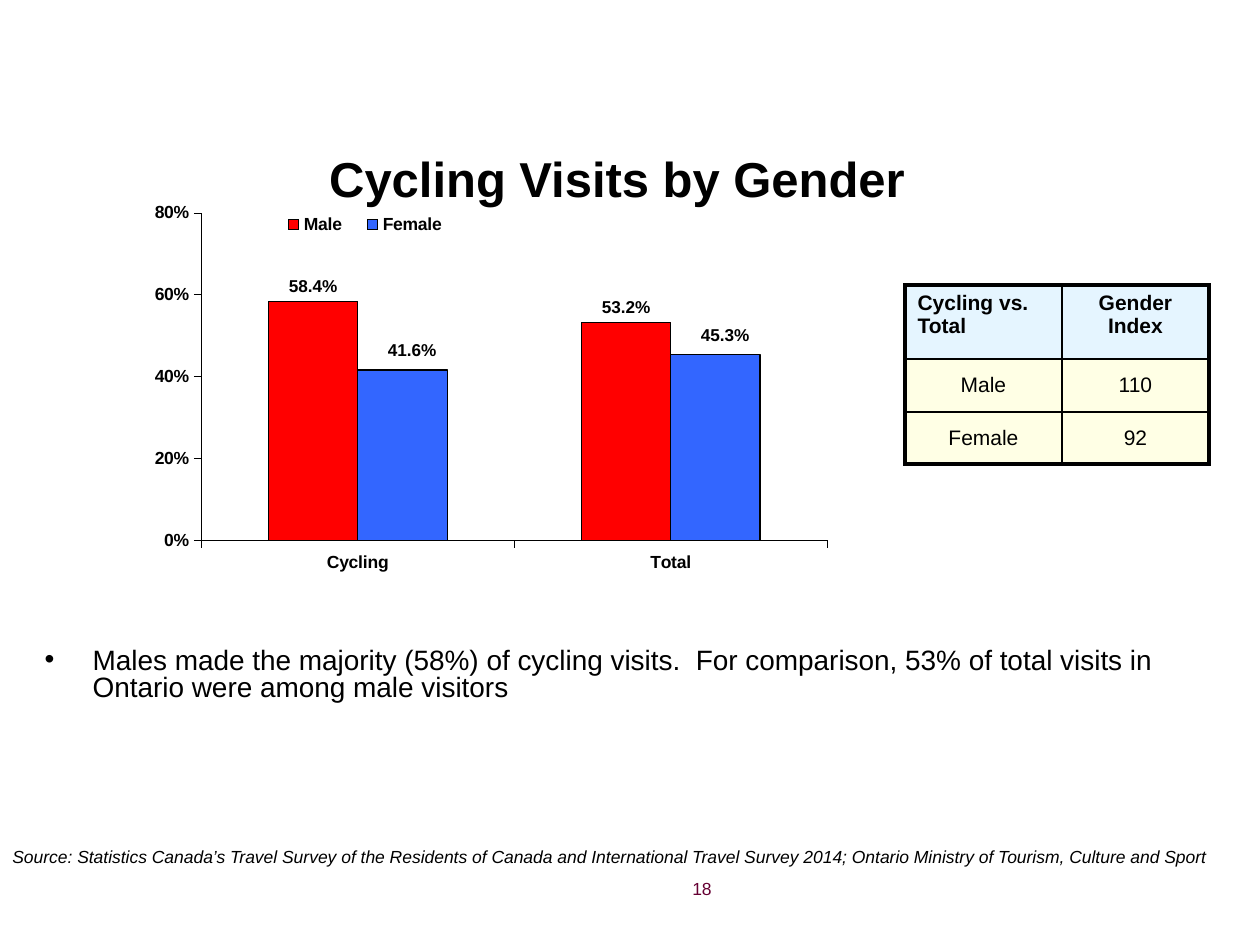
from pptx import Presentation
from pptx.chart.data import CategoryChartData
from pptx.dml.color import RGBColor
from pptx.enum.chart import XL_CHART_TYPE, XL_LABEL_POSITION, XL_LEGEND_POSITION, XL_TICK_MARK
from pptx.enum.text import MSO_ANCHOR, PP_ALIGN
from pptx.oxml import parse_xml
from pptx.oxml.ns import nsdecls
from pptx.util import Emu, Pt

COLUMNS = XL_CHART_TYPE.COLUMN_CLUSTERED
OUTSIDE_END = XL_LABEL_POSITION.OUTSIDE_END
LEGEND_RIGHT = XL_LEGEND_POSITION.RIGHT
TICK_OUT, TICK_NONE = XL_TICK_MARK.OUTSIDE, XL_TICK_MARK.NONE
TOP, MIDDLE = MSO_ANCHOR.TOP, MSO_ANCHOR.MIDDLE
LEFT, CENTER, RIGHT = PP_ALIGN.LEFT, PP_ALIGN.CENTER, PP_ALIGN.RIGHT

FONT = "Arial"
BLACK = "000000"


def px(length):
    return Emu(round(length * 914400 / 126))


def color(hex_code):
    return RGBColor.from_string(hex_code)


def style_font(font, size, ink=BLACK, bold=False, italic=False):
    font.name, font.size, font.bold, font.italic = FONT, Pt(size), bold, italic
    font.color.rgb = color(ink)


def write(frame, text, align=LEFT, spacing=None, **style):
    """Put one formatted paragraph into a text frame."""
    para = frame.paragraphs[0]
    para.alignment = align
    para.space_before = Pt(0)
    if spacing:
        para.line_spacing = spacing
    span = para.add_run()
    span.text = text
    style_font(span.font, **style)
    return para


def manual_layout(x, y, width=None, height=None, mode="edge", target=None):
    """Chart layout as fractions of the chart area."""
    parts = f'<c:layoutTarget val="{target}"/>' if target else ""
    if mode == "edge":
        parts += '<c:xMode val="edge"/><c:yMode val="edge"/>'
    parts += f'<c:x val="{x}"/><c:y val="{y}"/>'
    if width:
        parts += f'<c:w val="{width}"/><c:h val="{height}"/>'
    return parse_xml(f'<c:layout {nsdecls("c")}><c:manualLayout>{parts}'
                     '</c:manualLayout></c:layout>')


def place_layout(element, layout, after=None):
    """Set an element's layout, first or just after a named child."""
    for old in element.xpath("c:layout"):
        element.remove(old)
    if after:
        element.xpath(after)[0].addnext(layout)
    else:
        element.insert(0, layout)


class SlideBuilder:
    def __init__(self, deck):
        self.page = deck.slides.add_slide(deck.slide_layouts[1])

    def place(self, box, left, top, width, height):
        box.left, box.top = px(left), px(top)
        box.width, box.height = px(width), px(height)
        box.text_frame.word_wrap = True
        box.text_frame.vertical_anchor = TOP
        return box.text_frame

    def title(self, text, *area):
        frame = self.place(self.page.shapes.title, *area)
        frame.margin_top = px(12)
        write(frame, text, CENTER, size=28, bold=True)

    def bullet(self, text, *area):
        frame = self.place(self.page.placeholders[1], *area)
        para = write(frame, text, spacing=0.8, size=16)
        properties = para._p.get_or_add_pPr()
        properties.set("marL", str(px(48)))
        properties.set("indent", str(px(-48)))
        properties.append(parse_xml(f'<a:buChar {nsdecls("a")} char="•"/>'))

    def text(self, text, *area, **style):
        box = self.page.shapes.add_textbox(*map(px, area))
        write(self.place(box, *area), text, **style)

    def table(self, left, top, widths, heights, rows):
        table = self.page.shapes.add_table(
            len(heights), len(widths), px(left), px(top),
            px(sum(widths)), px(sum(heights))).table
        table.first_row = table.horz_banding = False
        for column, width in zip(table.columns, widths):
            column.width = px(width)
        for row, height in zip(table.rows, heights):
            row.height = px(height)
        for r, values in enumerate(rows):
            for c, value in enumerate(values):
                outer = {"L": c == 0, "R": c == len(widths) - 1,
                         "T": r == 0, "B": r == len(heights) - 1}
                self.cell(table.cell(r, c), value, r == 0, c == 0, outer)

    def cell(self, cell, value, header, first, outer):
        if not header:
            cell.margin_left = cell.margin_right = 0
            cell.margin_top = cell.margin_bottom = 0
        cell.vertical_anchor = TOP if header else MIDDLE
        write(cell.text_frame, value, LEFT if header and first else CENTER,
              size=12, bold=header)
        cell.fill.solid()
        cell.fill.fore_color.rgb = color("CCECFF" if header else "FFFFCC")
        properties = cell._tc.get_or_add_tcPr()
        properties.xpath("a:solidFill/a:srgbClr")[0].append(
            parse_xml(f'<a:alpha {nsdecls("a")} val="50000"/>'))
        for index, side in enumerate("LRTB"):
            width = Pt(2.25 if outer[side] else 1)
            properties.insert(index, parse_xml(
                f'<a:ln{side} {nsdecls("a")} w="{width}"><a:solidFill>'
                f'<a:srgbClr val="{BLACK}"/></a:solidFill></a:ln{side}>'))

    def chart(self, categories, series, fills, nudges, *area):
        data = CategoryChartData(number_format="0.0%")
        data.categories = categories
        for name, values in series.items():
            data.add_series(name, values)
        chart = self.page.shapes.add_chart(COLUMNS, *map(px, area), data).chart
        style_font(chart.font, 10, bold=True)
        chart.has_title = False
        plot = chart.plots[0]
        plot.gap_width, plot.overlap, plot.vary_by_categories = 150, 0, False

        # Axes
        for axis in (chart.category_axis, chart.value_axis):
            axis.has_major_gridlines = False
            axis.major_tick_mark, axis.minor_tick_mark = TICK_OUT, TICK_NONE
            axis.format.line.color.rgb = color(BLACK)
            axis.format.line.width = Pt(0.19)
            style_font(axis.tick_labels.font, 10, bold=True)
        scale = chart.value_axis
        scale.minimum_scale, scale.maximum_scale, scale.major_unit = 0, 0.8, 0.2
        scale.tick_labels.number_format = "0%"
        scale.tick_labels.number_format_is_linked = False

        # Bars and their labels
        for bars, fill in zip(plot.series, fills):
            bars.format.fill.solid()
            bars.format.fill.fore_color.rgb = color(fill)
            bars.format.line.color.rgb = color(BLACK)
            bars.format.line.width = Pt(0.75)
            labels = bars.data_labels
            labels.show_value, labels.position = True, OUTSIDE_END
            labels.number_format, labels.number_format_is_linked = "0.0%", False
            style_font(labels.font, 9.8, bold=True)

        # Labels of the last series sit slightly off their bars
        for index, (x, y) in enumerate(nudges):
            label = plot.series[-1].points[index].data_label
            style_font(label.font, 9.8, bold=True)
            label.position = OUTSIDE_END
            element = chart.element.xpath(f".//c:dLbl[c:idx/@val={index}]")[0]
            layout = manual_layout(x, y, mode="factor")
            place_layout(element, layout, "c:idx")
            layout.addnext(parse_xml(
                f'<c:numFmt {nsdecls("c")} formatCode="0.0%" sourceLinked="0"/>'))

        # Legend and plot area
        chart.has_legend = True
        chart.legend.position = LEGEND_RIGHT
        chart.legend.include_in_layout = False
        style_font(chart.legend.font, 10, bold=True)
        place_layout(chart.element.xpath(".//c:legend")[0],
                     manual_layout(0.17, 0.05, 0.2, 0.05), "c:legendPos")
        place_layout(chart.element.xpath(".//c:plotArea")[0],
                     manual_layout(0.1, 0.05, 0.65, 0.69, target="inner"))


def main():
    deck = Presentation()
    deck.slide_width, deck.slide_height = px(1260), px(945)
    slide = SlideBuilder(deck)
    slide.title("Cycling Visits by Gender", 50, 136, 1134, 95)
    slide.table(905, 285, [157, 147], [74, 53, 52],
                [["Cycling vs. Total", "Gender Index"],
                 ["Male", "110"], ["Female", "92"]])
    slide.bullet("Males made the majority (58%) of cycling visits.  For comparison, "
                 "53% of total visits in Ontario were among male visitors",
                 32, 643, 1197, 210)
    slide.text("18", 640, 872, 84, 44, align=RIGHT, size=10, ink="660033")
    slide.chart(["Cycling", "Total"],
                {"Male": (0.584, 0.532), "Female": (0.416, 0.453)},
                ["FF0000", "3366FF"], [(0.01, -0.01), (0.01, -0.01)],
                105, 189, 963, 475)
    slide.text("Source: Statistics Canada’s Travel Survey of the Residents of Canada and "
               "International Travel Survey 2014; Ontario Ministry of Tourism, "
               "Culture and Sport", 0, 840, 1235, 34, size=10, italic=True)
    deck.save("out.pptx")


if __name__ == "__main__":
    main()
